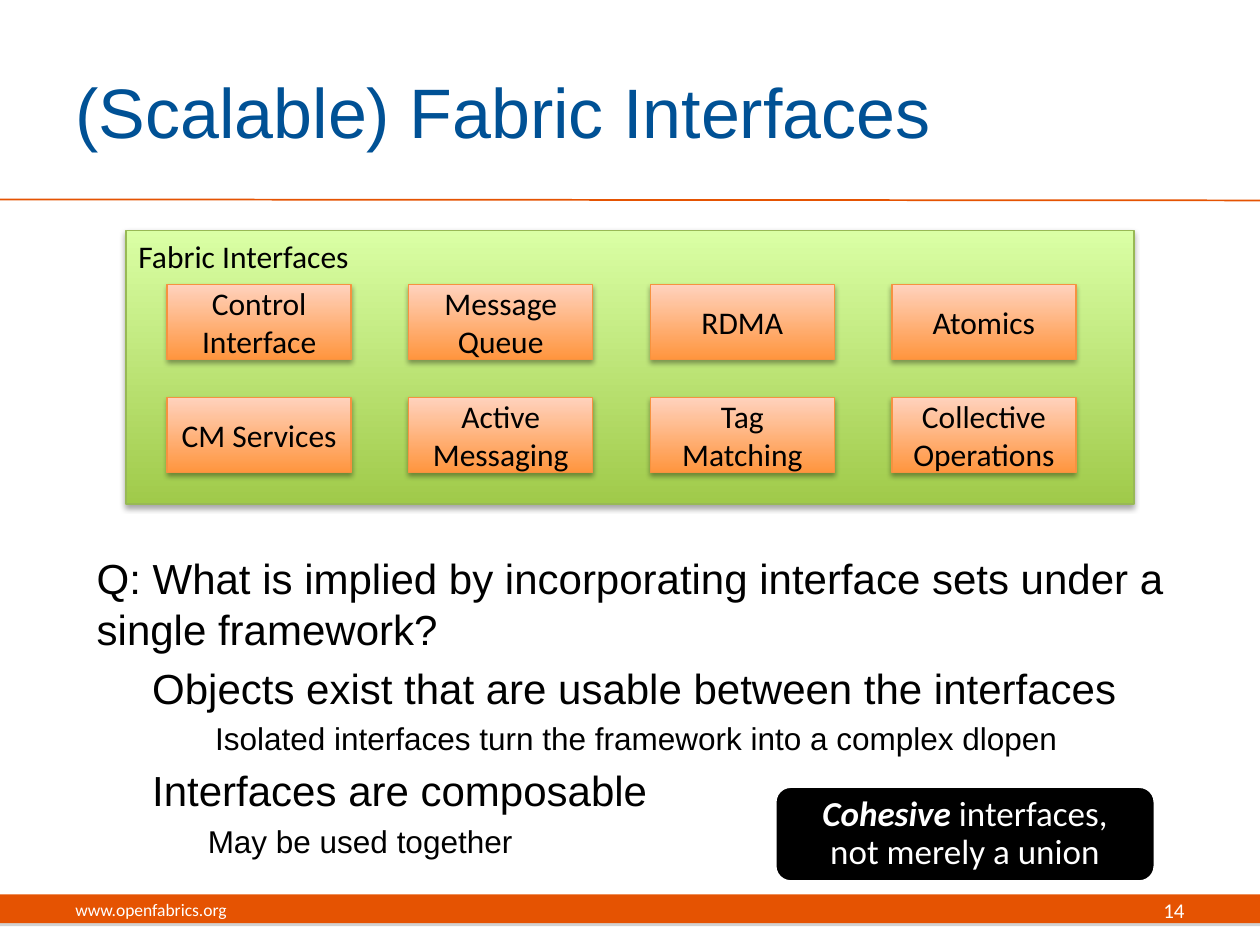
from lxml.etree import SubElement
from pptx import Presentation
from pptx.dml.color import RGBColor
from pptx.enum.shapes import MSO_CONNECTOR, MSO_SHAPE
from pptx.enum.text import MSO_ANCHOR, PP_ALIGN
from pptx.oxml.ns import qn
from pptx.util import Cm, Pt

BLACK = RGBColor(0x00, 0x00, 0x00)
WHITE = RGBColor(0xFF, 0xFF, 0xFF)
GREY = RGBColor(0x80, 0x80, 0x80)
BLUE = RGBColor(0x00, 0x51, 0x95)
ORANGE = RGBColor(0xE5, 0x53, 0x02)
GREEN_LINE = RGBColor(0x98, 0xB9, 0x55)
GREEN_GRADIENT = (RGBColor(0xA0, 0xCA, 0x4A), RGBColor(0xDA, 0xFF, 0xA5))
CHIP_LINE = RGBColor(0xF6, 0x92, 0x40)
CHIP_GRADIENT = (RGBColor(0xFF, 0x95, 0x3E), RGBColor(0xFF, 0xD2, 0xBD))

INTERFACES = (
    ("Control\nInterface", "Message Queue", "RDMA", "Atomics"),
    ("CM Services", "Active Messaging", "Tag Matching", "Collective Operations"),
)
POINTS = (
    ("Q: What is implied by incorporating interface sets under a single framework?", 0, 0, 24),
    ("Objects exist that are usable between the interfaces", 1, 1.12, 24),
    ("Isolated interfaces turn the framework into a complex dlopen", 2, 2.39, 18),
    ("Interfaces are composable", 1, 1.12, 24),
    ("May be used together", 2, 2.24, 18),
)


def apply_format(target, values):
    """Set each named attribute of the target."""
    for name, value in values.items():
        setattr(target, name, value)


def write_span(para, text, size, color, font="Calibri", **extra):
    """Add one formatted run to a paragraph."""
    span = para.add_run()
    span.text = text
    apply_format(span.font, {"name": font, "size": Pt(size), **extra})
    span.font.color.rgb = color


def prepare_frame(shape, anchor, margin=None):
    """Wrap and anchor the text of a shape and return its frame."""
    values = {"word_wrap": True, "vertical_anchor": anchor}
    if margin is not None:
        sides = ("left", "top", "right", "bottom")
        values.update({f"margin_{side}": Cm(margin) for side in sides})
    apply_format(shape.text_frame, values)
    return shape.text_frame


def add_label(page, box, text, size, color, font="Calibri", align=PP_ALIGN.LEFT):
    """Add a single-line text box centred vertically in its box."""
    label = page.shapes.add_textbox(*map(Cm, box))
    para = prepare_frame(label, MSO_ANCHOR.MIDDLE).paragraphs[0]
    para.alignment = align
    write_span(para, text, size, color, font)


def add_shadow(shape, color, blur):
    """Give a shape a soft shadow below it."""
    shape.shadow.inherit = False
    effects = shape._element.spPr.find(qn("a:effectLst"))
    shadow = SubElement(effects, qn("a:outerShdw"), blurRad=str(Pt(blur)),
                        dist=str(Pt(1.8)), dir="5400000", rotWithShape="0")
    tint = SubElement(shadow, qn("a:srgbClr"), val=str(color))
    SubElement(tint, qn("a:alpha"), val="35000")


def add_gradient_box(page, box, colors, line_color, text, anchor, align):
    """Add a shaded rectangle with a line of text per paragraph."""
    shape = page.shapes.add_shape(MSO_SHAPE.RECTANGLE, *map(Cm, box))
    shape.fill.gradient()
    shape.fill.gradient_angle = 90
    for stop, color in zip(shape.fill.gradient_stops, colors):
        stop.color.rgb = color
    shape.line.color.rgb = line_color
    shape.line.width = Pt(0.75)
    add_shadow(shape, BLACK, 3.1)
    frame = prepare_frame(shape, anchor)
    for index, words in enumerate(text.split("\n")):
        para = frame.add_paragraph() if index else frame.paragraphs[0]
        para.alignment = align
        write_span(para, words, 18, BLACK)


def add_footer(page, box):
    """Add the coloured bar with the address and page number."""
    left, top, width, height = box
    bar = page.shapes.add_shape(MSO_SHAPE.RECTANGLE, *map(Cm, box))
    bar.fill.solid()
    bar.fill.fore_color.rgb = ORANGE
    bar.line.fill.background()
    add_shadow(bar, GREY, 0)
    add_label(page, (left + 1.27, top - 0.2, 8.05, 1.02), "www.openfabrics.org", 10, WHITE)
    add_label(page, (left + width - 7.19, top - 0.2, 5.92, 1.02), "14", 12, WHITE,
              align=PP_ALIGN.RIGHT)


def add_header(page, box):
    """Add the title and the rule beneath it."""
    left, top, width, height = box
    rule = page.shapes.add_connector(
        MSO_CONNECTOR.STRAIGHT, Cm(left), Cm(top + height - 0.02),
        Cm(left + width), Cm(top + height))
    rule.line.color.rgb = ORANGE
    rule.line.width = Pt(1)
    SubElement(rule._element.spPr, qn("a:effectLst"))
    add_label(page, (left + 1.27, top + 0.64, 20.75, 3.17),
              "(Scalable) Fabric Interfaces", 40, BLUE, "Arial")


def add_fabric_panel(page, box):
    """Add the green panel with its grid of interface sets."""
    left, top, width, height = box
    add_gradient_box(page, box, GREEN_GRADIENT, GREEN_LINE, "Fabric Interfaces",
                     MSO_ANCHOR.TOP, PP_ALIGN.LEFT)
    for row, names in enumerate(INTERFACES):
        for column, name in enumerate(names):
            chip = (left + 0.83 + 4.87 * column, top + 1.09 + 2.28 * row, 3.71, 1.51)
            add_gradient_box(page, chip, CHIP_GRADIENT, CHIP_LINE, name,
                             MSO_ANCHOR.MIDDLE, PP_ALIGN.CENTER)


def add_points(page, box):
    """Add the question and its indented answers."""
    body = page.shapes.add_textbox(*map(Cm, box))
    frame = prepare_frame(body, MSO_ANCHOR.TOP)
    for index, (text, level, indent, size) in enumerate(POINTS):
        para = frame.add_paragraph() if index else frame.paragraphs[0]
        para.level = level
        para.space_before = Pt(size * 0.2 if index else 0)
        properties = para._element.get_or_add_pPr()
        properties.set("marL", str(Cm(indent)))
        properties.set("indent", "0")
        write_span(para, text, size, BLACK, "Arial")


def add_callout(page, box):
    """Add the black rounded box with the conclusion."""
    left, top, width, height = box
    plate = page.shapes.add_shape(MSO_SHAPE.ROUNDED_RECTANGLE, *map(Cm, box))
    plate.shadow.inherit = False
    plate.fill.solid()
    plate.fill.fore_color.rgb = BLACK
    plate.line.color.rgb = WHITE
    plate.line.width = Pt(2)
    inner = (left + 0.1, top + 0.1, width - 0.2, height - 0.2)
    label = page.shapes.add_textbox(*map(Cm, inner))
    para = prepare_frame(label, MSO_ANCHOR.MIDDLE, 0.2).paragraphs[0]
    apply_format(para, {"alignment": PP_ALIGN.CENTER, "line_spacing": 0.9})
    write_span(para, "Cohesive ", 20, WHITE, bold=True, italic=True)
    write_span(para, "interfaces,", 20, WHITE)
    para.add_line_break()
    write_span(para, "not merely a union", 20, WHITE)


def main():
    """Build the slide and save the deck."""
    deck = Presentation()
    apply_format(deck, {"slide_width": Cm(25.4), "slide_height": Cm(19.05)})
    page = deck.slides.add_slide(deck.slide_layouts[6])
    add_footer(page, (0, 18.03, 25.4, 0.58))
    add_header(page, (0, 0, 25.4, 4.04))
    add_points(page, (1.7, 11.02, 22.86, 6.99))
    add_fabric_panel(page, (2.54, 4.65, 20.32, 5.51))
    add_callout(page, (15.62, 15.85, 7.67, 1.93))
    deck.save("out.pptx")


if __name__ == "__main__":
    main()
